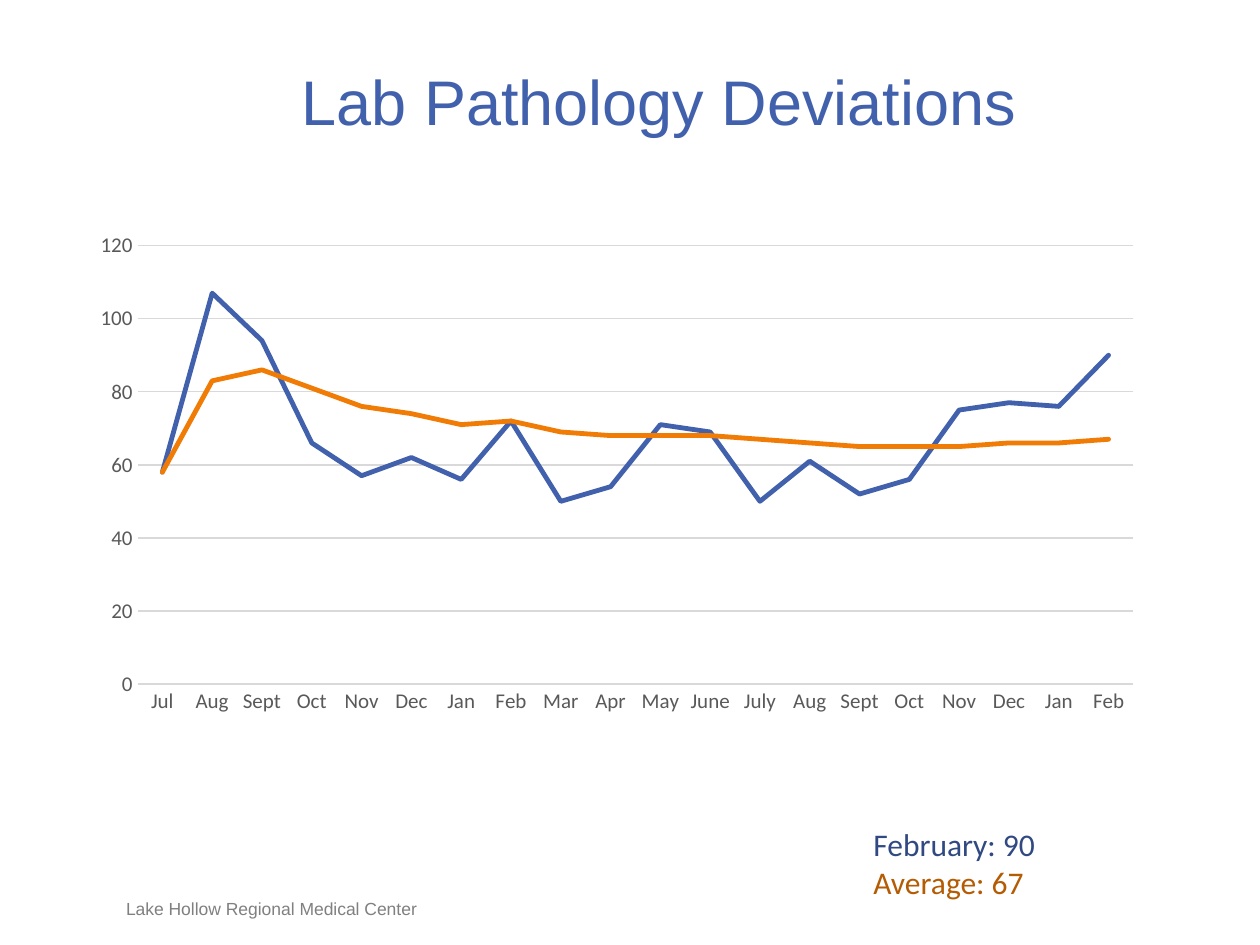
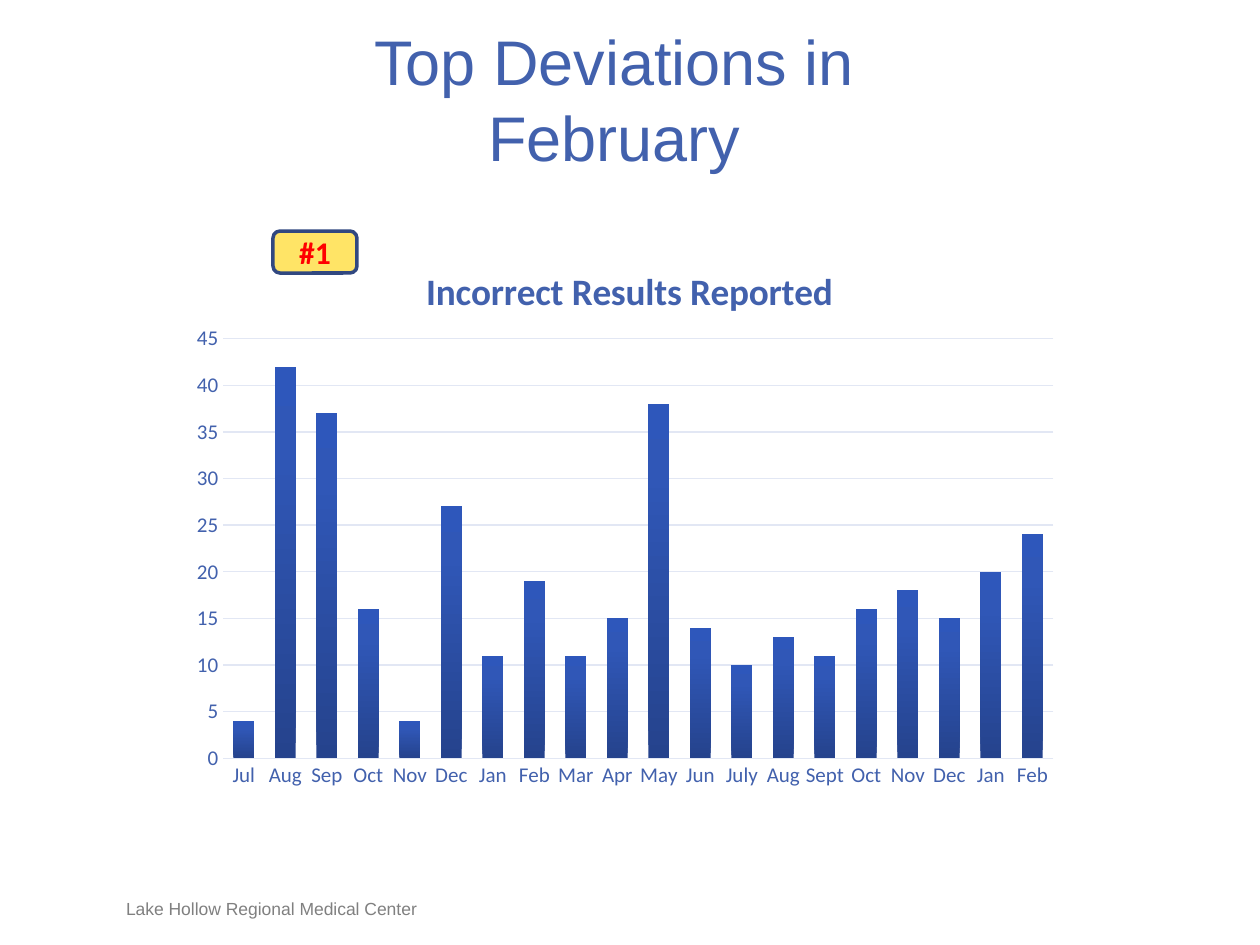
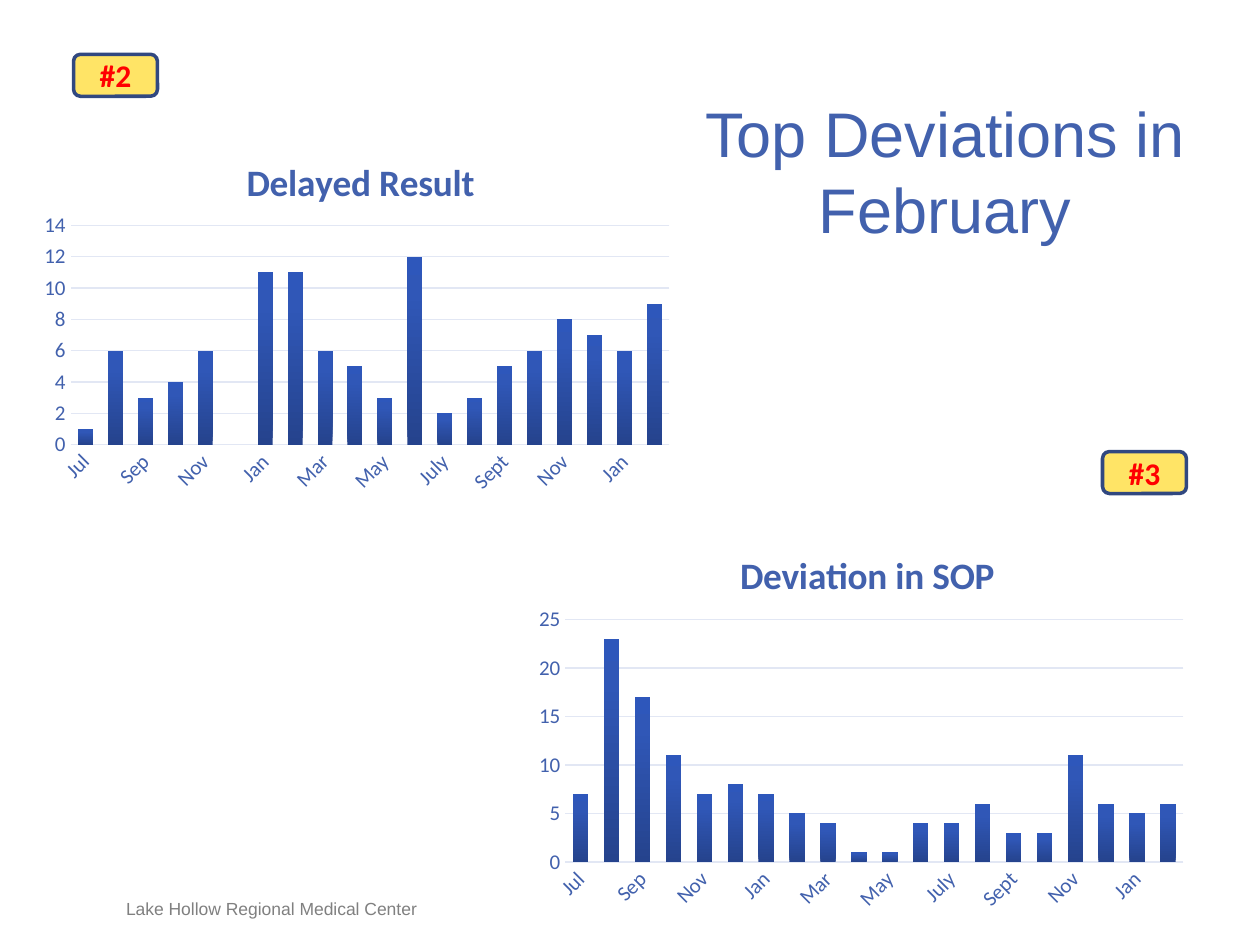
"""Build the three-slide laboratory deviation report."""
from dataclasses import dataclass
from typing import NamedTuple, Optional

from lxml import etree
from pptx import Presentation
from pptx import util as u
from pptx.chart import data as cd
from pptx.dml.color import RGBColor
from pptx.enum import chart as ce, shapes, text
from pptx.oxml.ns import qn


@dataclass(frozen=True)
class Theme:
    """Colours, fonts and type sizes shared by the slides."""
    blue: str = "4261AD"
    orange: str = "F07B05"
    navy: str = "314982"
    rust: str = "B45C04"
    grey: str = "808080"
    axis_grey: str = "595959"
    grid_grey: str = "D9D9D9"
    grid_blue: str = "E2E7F4"
    badge_fill: str = "FFE466"
    badge_line: str = "314880"
    badge_text: str = "FF0000"
    bar_stops: tuple = ((0, "25438D"), (80, "3057B7"), (100, "2E57BB"))
    heading_font: str = "Arial"
    body_font: str = "Calibri"
    title_size: float = 36
    chart_title_size: float = 21.3
    body_size: float = 18
    axis_size: float = 12
    footer_size: float = 10


T = Theme()
FOOTER = "Lake Hollow Regional Medical Center"
LINE_MONTHS = ("Jul Aug Sept Oct Nov Dec Jan Feb Mar Apr May June "
               "July Aug Sept Oct Nov Dec Jan Feb").split()
BAR_MONTHS = ("Jul Aug Sep Oct Nov Dec Jan Feb Mar Apr May Jun "
              "July Aug Sept Oct Nov Dec Jan Feb").split()


class Box(NamedTuple):
    """Left, top, width and height in points."""
    x: float
    y: float
    w: float
    h: float

    def pts(self) -> list:
        """Return the four lengths as Pt values."""
        return [u.Pt(v) for v in self]


class Line(NamedTuple):
    """One paragraph of text with its colour."""
    words: str
    color: str


class Badge(NamedTuple):
    """A rank label and its top-left corner."""
    label: str
    x: float
    y: float


class BarChart(NamedTuple):
    """A bar chart with its values, scale and layout fractions."""
    title: str
    box: Box
    values: list
    top: int
    step: int
    title_at: tuple
    plot_at: tuple
    angle: Optional[int] = None


MONTHLY = [58, 107, 94, 66, 57, 62, 56, 72, 50, 54,
           71, 69, 50, 61, 52, 56, 75, 77, 76, 90]
AVERAGE = [58, 83, 86, 81, 76, 74, 71, 72, 69, 68,
           68, 68, 67, 66, 65, 65, 65, 66, 66, 67]
INCORRECT = BarChart(
    "Incorrect Results Reported", Box(102, 132, 510, 324),
    [4, 42, 37, 16, 4, 27, 11, 19, 11, 15, 38, 14, 10, 13, 11, 16, 18, 15, 20, 24],
    45, 5, (0.27, 0.05), (0.05, 0.19, 0.93, 0.74))
DELAYED = BarChart(
    "Delayed Result", Box(18, 70.5, 372, 216),
    [1, 6, 3, 4, 6, None, 11, 11, 6, 5, 3, 12, 2, 3, 5, 6, 8, 7, 6, 9],
    14, 2, (0.32, 0.07), (0.06, 0.27, 0.92, 0.58), -45)
SOP = BarChart(
    "Deviation in SOP", Box(300, 294, 384, 231),
    [7, 23, 17, 11, 7, 8, 7, 5, 4, 1, 1, 4, 4, 6, 3, 3, 11, 6, 5, 6],
    25, 5, (0.31, 0.07), (0.06, 0.26, 0.92, 0.6), -45)


def rgb(color: str) -> RGBColor:
    """Turn a hex string into a colour."""
    return RGBColor.from_string(color)


def style(font, name: str, size: float, color: str, bold: bool = False) -> None:
    """Set the face, size, colour and weight of a font."""
    font.name, font.size, font.bold = name, u.Pt(size), bold
    font.color.rgb = rgb(color)


def stroke(line, color: str, width: float) -> None:
    """Give a line its colour and width."""
    line.color.rgb = rgb(color)
    line.width = u.Pt(width)


def add_text(slide, box: Box, lines: list, font: str, size: float,
             align=text.PP_ALIGN.LEFT, anchor=text.MSO_ANCHOR.TOP,
             inset: bool = False) -> None:
    """Add a wrapping text box, with default margins if inset."""
    tf = slide.shapes.add_textbox(*box.pts()).text_frame
    tf.word_wrap = True
    tf.vertical_anchor = anchor
    if not inset:
        tf.margin_left = tf.margin_top = tf.margin_right = tf.margin_bottom = 0
    for i, line in enumerate(lines):
        p = tf.add_paragraph() if i else tf.paragraphs[0]
        p.text, p.alignment = line.words, align
        style(p.font, font, size, line.color)


def add_slide(prs, title: str, title_box: Box):
    """Add a slide with the shared footer and title."""
    s = prs.slides.add_slide(prs.slide_layouts[6])
    add_text(s, Box(72, 512.5, 228, 12.5), [Line(FOOTER, T.grey)],
             T.heading_font, T.footer_size, anchor=text.MSO_ANCHOR.BOTTOM)
    add_text(s, title_box, [Line(title, T.blue)],
             T.heading_font, T.title_size, text.PP_ALIGN.CENTER)
    return s


def add_badge(slide, badge: Badge) -> None:
    """Add a rounded rank badge."""
    sp = slide.shapes.add_shape(shapes.MSO_SHAPE.ROUNDED_RECTANGLE,
                                *Box(badge.x, badge.y, 48, 24).pts())
    sp.shadow.inherit = False
    sp.fill.solid()
    sp.fill.fore_color.rgb = rgb(T.badge_fill)
    stroke(sp.line, T.badge_line, 2)
    tf = sp.text_frame
    tf.vertical_anchor = text.MSO_ANCHOR.MIDDLE
    p = tf.paragraphs[0]
    p.text, p.alignment = badge.label, text.PP_ALIGN.CENTER
    style(p.font, T.body_font, T.body_size, T.badge_text, True)


def place(parent, index: int, fractions: tuple, inner: bool = False) -> None:
    """Fix a chart part at fractions of the chart's size."""
    layout = parent.find(qn("c:layout"))
    if layout is None:
        layout = etree.Element(qn("c:layout"))
        parent.insert(index, layout)
    manual = etree.SubElement(layout, qn("c:manualLayout"))
    settings = [("layoutTarget", "inner")] if inner else []
    settings += [("xMode", "edge"), ("yMode", "edge")]
    settings += zip("xywh", fractions)
    for tag, value in settings:
        etree.SubElement(manual, qn(f"c:{tag}")).set("val", str(value))


def add_chart(slide, kind, box: Box, months: list, series: dict, top: int, step: int,
              plot_at: tuple, label_color: str, grid_color: str, base_width: float):
    """Add a chart with the shared axis style."""
    data = cd.CategoryChartData()
    data.categories = months
    for name, values in series.items():
        data.add_series(name, values)
    chart = slide.shapes.add_chart(kind, *box.pts(), data).chart
    chart.has_legend = chart.has_title = False
    chart.font.name, chart.font.size = T.body_font, u.Pt(T.footer_size)
    chart.plots[0].vary_by_categories = False
    for axis in (chart.category_axis, chart.value_axis):
        axis.major_tick_mark = axis.minor_tick_mark = ce.XL_TICK_MARK.NONE
        style(axis.tick_labels.font, T.body_font, T.axis_size, label_color)
    stroke(chart.category_axis.format.line, grid_color, base_width)
    values = chart.value_axis
    values.minimum_scale, values.maximum_scale, values.major_unit = 0, top, step
    values.format.line.fill.background()
    stroke(values.major_gridlines.format.line, grid_color, 0.75)
    place(chart._chartSpace.find(".//" + qn("c:plotArea")), 0, plot_at, inner=True)
    return chart


def add_trend(slide) -> None:
    """Add the line chart of monthly counts and their average."""
    chart = add_chart(slide, ce.XL_CHART_TYPE.LINE, Box(48, 126, 612, 288), LINE_MONTHS,
                      {"Series 1": MONTHLY, "Series 2": AVERAGE}, 120, 20,
                      (0.05, 0.05, 0.93, 0.87), T.axis_grey, T.grid_grey, 1)
    for series, color in zip(chart.plots[0].series, (T.blue, T.orange)):
        series.smooth = False
        series.marker.style = ce.XL_MARKER_STYLE.NONE
        stroke(series.format.line, color, 2.75)
        series._element.find(".//" + qn("a:ln")).set("cap", "rnd")


def add_bars(slide, spec_: BarChart) -> None:
    """Add a titled chart of gradient bars."""
    chart = add_chart(slide, ce.XL_CHART_TYPE.COLUMN_CLUSTERED, spec_.box, BAR_MONTHS,
                      {spec_.title: spec_.values}, spec_.top, spec_.step,
                      spec_.plot_at, T.blue, T.grid_blue, 0.75)
    p = chart.chart_title.text_frame.paragraphs[0]
    p.text = spec_.title
    style(p.font, T.body_font, T.chart_title_size, T.blue, True)
    chart.chart_title.include_in_layout = False
    place(chart.chart_title._element, 1, spec_.title_at)
    plot = chart.plots[0]
    plot.gap_width, plot.overlap = 100, -24
    series = plot.series[0]
    fill = series.format.fill
    fill.gradient()
    fill.gradient_angle = 90
    stops = series._element.find(".//" + qn("a:gsLst"))
    stops.clear()
    for percent, color in T.bar_stops:
        stop = etree.SubElement(stops, qn("a:gs"), pos=str(percent * 1000))
        etree.SubElement(stop, qn("a:srgbClr"), val=color)
    if spec_.angle is not None:
        labels = chart.category_axis._element.find(qn("c:txPr"))
        labels.find(qn("a:bodyPr")).set("rot", str(spec_.angle * 60000))


def main() -> None:
    """Build and save the presentation."""
    prs = Presentation()
    prs.slide_width, prs.slide_height = u.Pt(720), u.Pt(540)

    s = add_slide(prs, "Lab Pathology Deviations", Box(70.5, 36, 612, 44))
    add_text(s, Box(492, 468, 144, 51),
             [Line("February: 90", T.navy), Line("Average: 67", T.rust)],
             T.body_font, T.body_size, inset=True)
    add_trend(s)

    ranked = [
        (Box(156, 13, 390, 87), [Badge("#1", 156, 132)], [INCORRECT]),
        (Box(396, 54, 288, 87), [Badge("#2", 42, 31), Badge("#3", 630, 258)],
         [DELAYED, SOP]),
    ]
    for title_box, badges, charts in ranked:
        s = add_slide(prs, "Top Deviations in February", title_box)
        for badge in badges:
            add_badge(s, badge)
        for bars in charts:
            add_bars(s, bars)

    prs.save("out.pptx")


if __name__ == "__main__":
    main()
